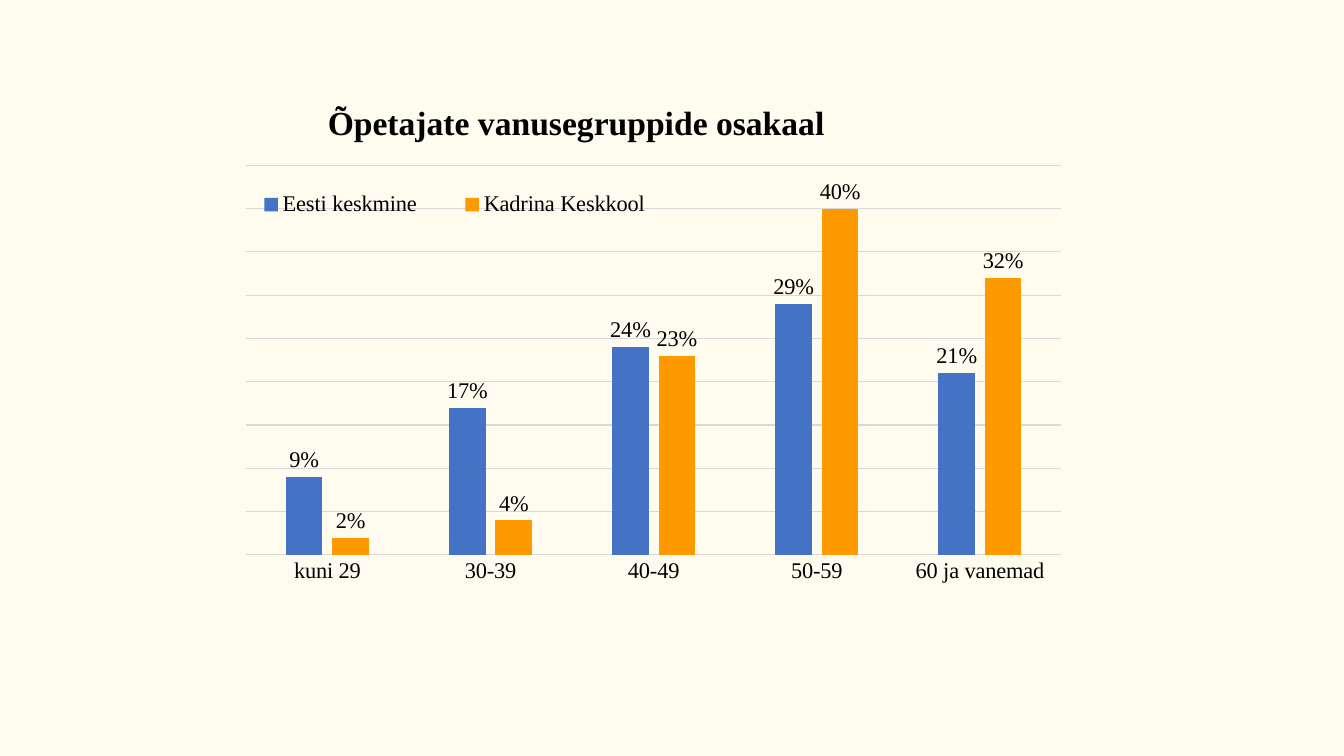
from lxml.etree import SubElement
from pptx import Presentation
from pptx.chart.data import CategoryChartData as Data
from pptx.dml.color import RGBColor
from pptx.enum.chart import XL_CHART_TYPE as Kind
from pptx.enum.chart import XL_LABEL_POSITION as Spot
from pptx.enum.chart import XL_LEGEND_POSITION as Side
from pptx.enum.chart import XL_TICK_MARK as Tick
from pptx.oxml.ns import qn
from pptx.util import Inches, Pt

CREAM = RGBColor(0xFF, 0xFB, 0xEF)
BLACK = RGBColor(0, 0, 0)
GREY = RGBColor(0xD9, 0xD9, 0xD9)
BLUE = RGBColor(0x44, 0x72, 0xC4)
ORANGE = RGBColor(0xFF, 0x99, 0x00)

AGES = ["kuni 29", "30-39", "40-49", "50-59", "60 ja vanemad"]
GROUPS = [
    ("Eesti keskmine", [0.09, 0.17, 0.24, 0.29, 0.21], BLUE),
    ("Kadrina Keskkool", [0.02, 0.04, 0.23, 0.4, 0.32], ORANGE),
]


def style(font, size=16, bold=False):
    font.name = "Times New Roman"
    font.size = Pt(size)
    font.bold = bold
    font.color.rgb = BLACK


def write(frame, text, **form):
    frame.text = text
    style(frame.paragraphs[0].runs[0].font, **form)


def rule(line):
    line.color.rgb = GREY
    line.width = Pt(0.75)


def place(chart, part, index, **share):
    node = chart.element.xpath("c:chart/c:" + part)[0]
    for old in node.findall(qn("c:layout")):
        node.remove(old)
    layout = SubElement(node, qn("c:layout"))
    manual = SubElement(layout, qn("c:manualLayout"))
    if part == "plotArea":
        SubElement(manual, qn("c:layoutTarget")).set("val", "inner")
    for key in ("xMode", "yMode"):
        SubElement(manual, qn("c:" + key)).set("val", "edge")
    for key, value in share.items():
        SubElement(manual, qn("c:" + key)).set("val", str(value))
    node.insert(index, layout)


def draw_axes(chart):
    ages = chart.category_axis
    ages.major_tick_mark = ages.minor_tick_mark = Tick.NONE
    rule(ages.format.line)
    style(ages.tick_labels.font)
    scale = chart.value_axis
    scale.minimum_scale, scale.maximum_scale = 0, 0.45
    scale.major_unit = 0.05
    scale.visible = False
    scale.has_major_gridlines = True
    rule(scale.major_gridlines.format.line)


def draw_bars(plot):
    plot.gap_width, plot.overlap = 219, -27
    plot.vary_by_categories = False
    for series, (_, _, color) in zip(plot.series, GROUPS):
        series.format.fill.solid()
        series.format.fill.fore_color.rgb = color
        labels = series.data_labels
        labels.show_value = True
        labels.position = Spot.OUTSIDE_END
        labels.number_format = "0%"
        labels.number_format_is_linked = False
        style(labels.font)


def draw_chart(slide, box):
    data = Data(number_format="0%")
    data.categories = AGES
    for name, shares, _ in GROUPS:
        data.add_series(name, shares)
    chart = slide.shapes.add_chart(Kind.COLUMN_CLUSTERED, *box, data).chart
    style(chart.font, size=12)
    chart.has_title = True
    write(chart.chart_title.text_frame, "Õpetajate vanusegruppide osakaal",
          size=24, bold=True)
    chart.has_legend = True
    chart.legend.position = Side.BOTTOM
    chart.legend.include_in_layout = False
    style(chart.legend.font)
    draw_axes(chart)
    draw_bars(chart.plots[0])
    place(chart, "title", 1, x=0.17, y=0.06)
    place(chart, "plotArea", 0, x=0.093, y=0.169, w=0.828, h=0.605)
    place(chart, "legend", 1, x=0.07, y=0.2, w=0.47, h=0.06)


def main():
    deck = Presentation()
    deck.slide_width, deck.slide_height = Inches(13.33), Inches(7.5)
    slide = deck.slides.add_slide(deck.slide_layouts[6])
    slide.background.fill.solid()
    slide.background.fill.fore_color.rgb = CREAM
    draw_chart(slide, [Inches(n) for n in (1.53, 0.56, 9.77, 6.39)])
    deck.save("out.pptx")


if __name__ == "__main__":
    main()
